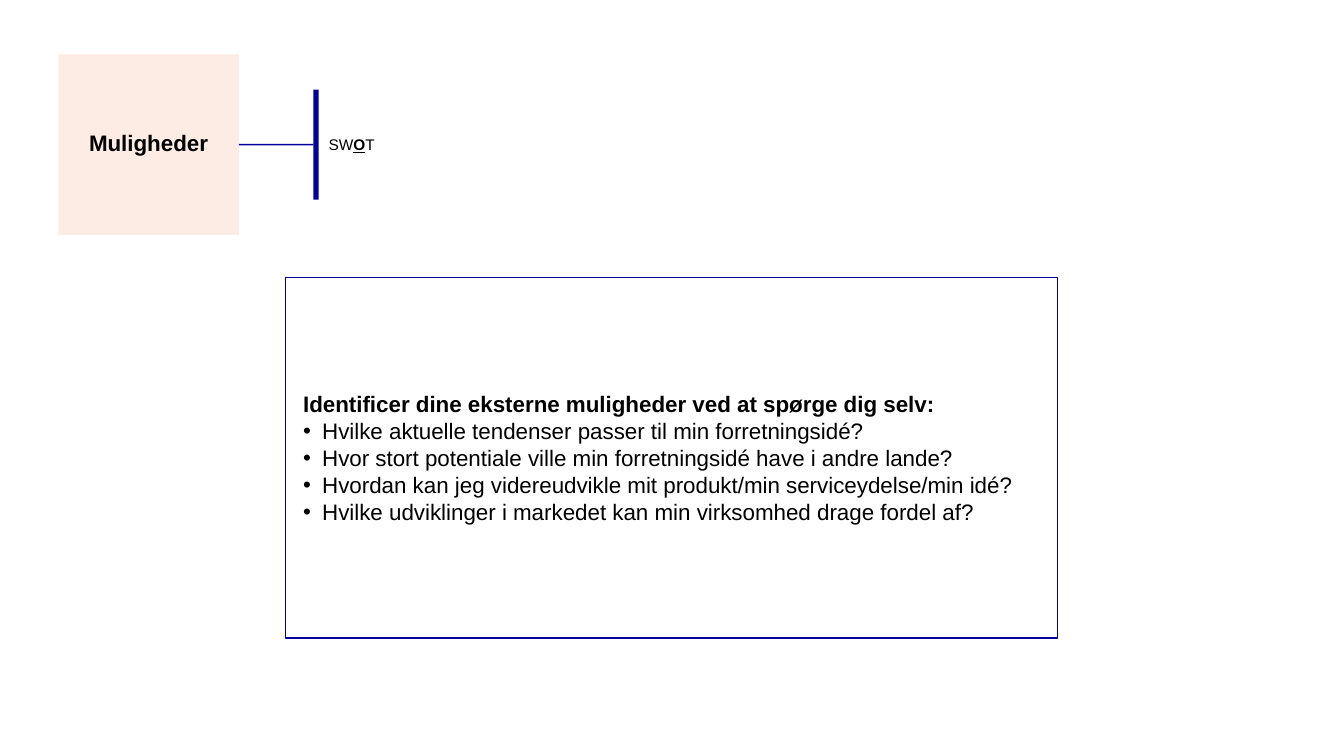
from pptx import Presentation
from pptx.dml.color import RGBColor
from pptx.enum.shapes import MSO_CONNECTOR, MSO_SHAPE
from pptx.enum.text import MSO_ANCHOR, MSO_AUTO_SIZE, PP_ALIGN
from pptx.oxml.ns import qn
from pptx.util import Cm, Pt
from lxml import etree

RECT = MSO_SHAPE.RECTANGLE
STRAIGHT = MSO_CONNECTOR.STRAIGHT
MIDDLE = MSO_ANCHOR.MIDDLE
LEFT, CENTER = PP_ALIGN.LEFT, PP_ALIGN.CENTER
NO_FIT = MSO_AUTO_SIZE.NONE

TITLE = "Muligheder"
SWOT = [("SW", False), ("O", True), ("T", False)]
HEADING = "Identificer dine eksterne muligheder ved at spørge dig selv:"
QUESTIONS = [
    "Hvilke aktuelle tendenser passer til min forretningsidé?",
    "Hvor stort potentiale ville min forretningsidé have i andre lande?",
    "Hvordan kan jeg videreudvikle mit produkt/min serviceydelse/min idé?",
    "Hvilke udviklinger i markedet kan min virksomhed drage fordel af?",
]
FONT, BLACK, NAVY, PEACH = "Arial", "000000", "03009F", "FDECE3"

SQUARE_X, SQUARE_Y, SQUARE = 1.47, 1.37, 4.55
MID_Y = SQUARE_Y + SQUARE / 2
BAR_X, BAR_W, BAR_H = 7.9, 0.13, 2.77
LABEL_W, LABEL_H = 4.72, 0.74
FRAME = (7.19, 6.99, 19.46, 9.09)


def rgb(value):
    return RGBColor.from_string(value)


def box(x, y, w, h):
    return Cm(x), Cm(y), Cm(w), Cm(h)


def add_run(p, text, size, bold=False, underline=False):
    r = p.add_run()
    r.text = text
    r.font.name = FONT
    r.font.size = Pt(size)
    r.font.bold = bold
    r.font.underline = underline
    r.font.color.rgb = rgb(BLACK)


def add_rect(x, y, w, h):
    sp = s.shapes.add_shape(RECT, *box(x, y, w, h))
    sp.shadow.inherit = False
    return sp


def indent(p, margin, first, bullet=None):
    pPr = p._p.get_or_add_pPr()
    pPr.set("marL", str(Cm(margin)))
    pPr.set("indent", str(Cm(first)))
    if bullet:
        etree.SubElement(pPr, qn("a:buFont"), typeface=FONT)
        etree.SubElement(pPr, qn("a:buChar"), char=bullet)


prs = Presentation()
prs.slide_width, prs.slide_height = Cm(33.87), Cm(19.05)
s = prs.slides.add_slide(prs.slide_layouts[5])

title = s.shapes.title
title.left, title.top, title.width, title.height = box(SQUARE_X, SQUARE_Y, SQUARE, SQUARE)
title.fill.solid()
title.fill.fore_color.rgb = rgb(PEACH)
tf = title.text_frame
tf.auto_size = NO_FIT
tf.word_wrap = True
tf.vertical_anchor = MIDDLE
tf.margin_left = tf.margin_right = 0
p = tf.paragraphs[0]
p.alignment = CENTER
p.line_spacing = 0.9
add_run(p, TITLE, 16, bold=True)

bar = add_rect(BAR_X, MID_Y - BAR_H / 2, BAR_W, BAR_H)
bar.fill.solid()
bar.fill.fore_color.rgb = rgb(NAVY)
bar.line.fill.background()

link = s.shapes.add_connector(STRAIGHT, 0, 0, 0, 0)
link.begin_connect(bar, 1)
link.end_connect(title, 3)
link.line.color.rgb = rgb(NAVY)
link.line.width = Pt(1)
etree.SubElement(link._element.spPr, qn("a:effectLst"))

label = s.shapes.add_textbox(*box(BAR_X + BAR_W, MID_Y - LABEL_H / 2, LABEL_W, LABEL_H))
tf = label.text_frame
tf.word_wrap = True
for text, marked in SWOT:
    add_run(tf.paragraphs[0], text, 11, bold=marked, underline=marked)

frame = add_rect(*FRAME)
frame.fill.background()
frame.line.color.rgb = rgb(NAVY)
frame.line.width = Pt(1)
tf = frame.text_frame
tf.word_wrap = True
tf.vertical_anchor = MIDDLE
p = tf.paragraphs[0]
p.alignment = LEFT
indent(p, 0.2, 0)
add_run(p, HEADING, 16, bold=True)
for question in QUESTIONS:
    p = tf.add_paragraph()
    p.alignment = LEFT
    indent(p, 0.68, -0.48, "•")
    add_run(p, question, 16)

prs.save("out.pptx")
